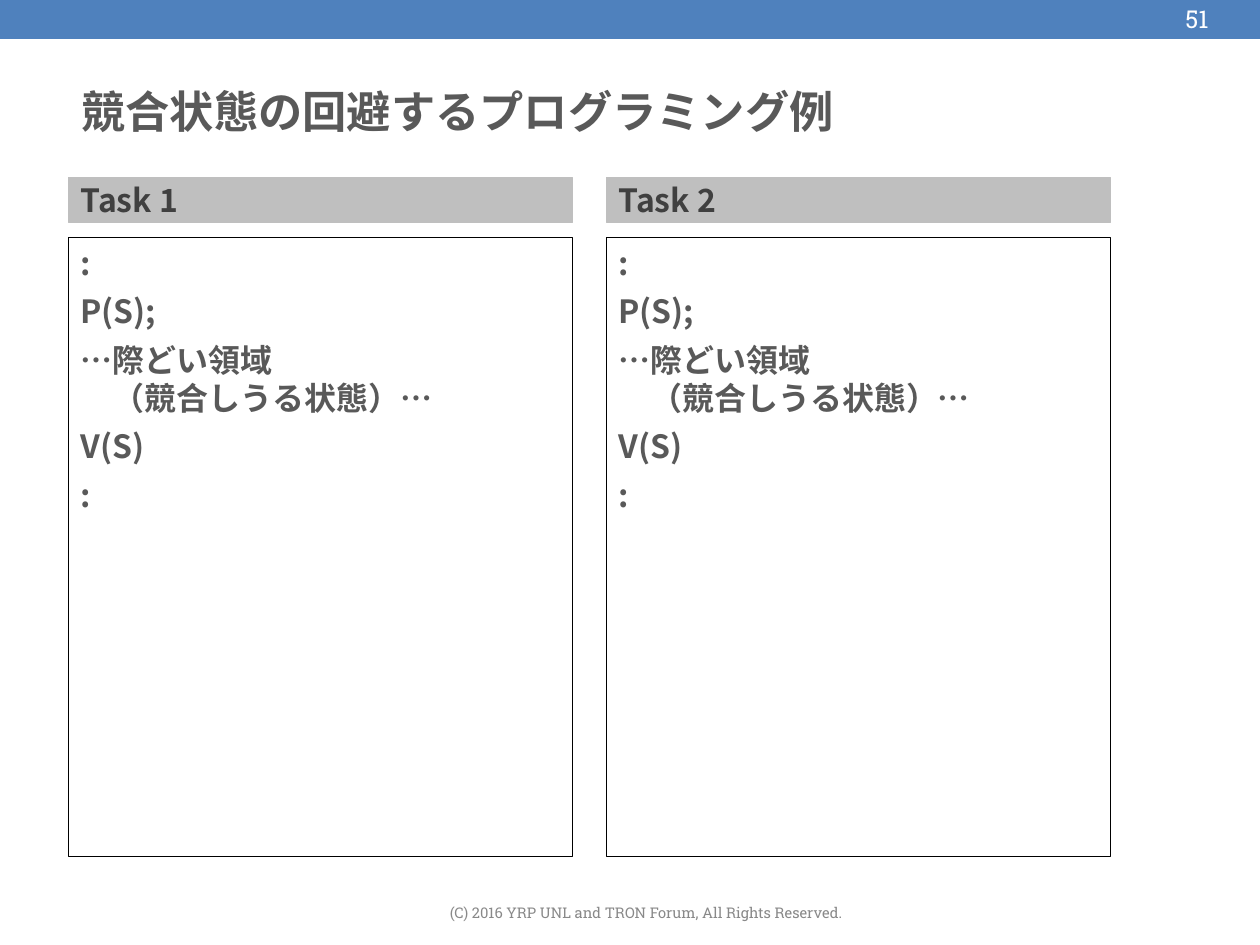
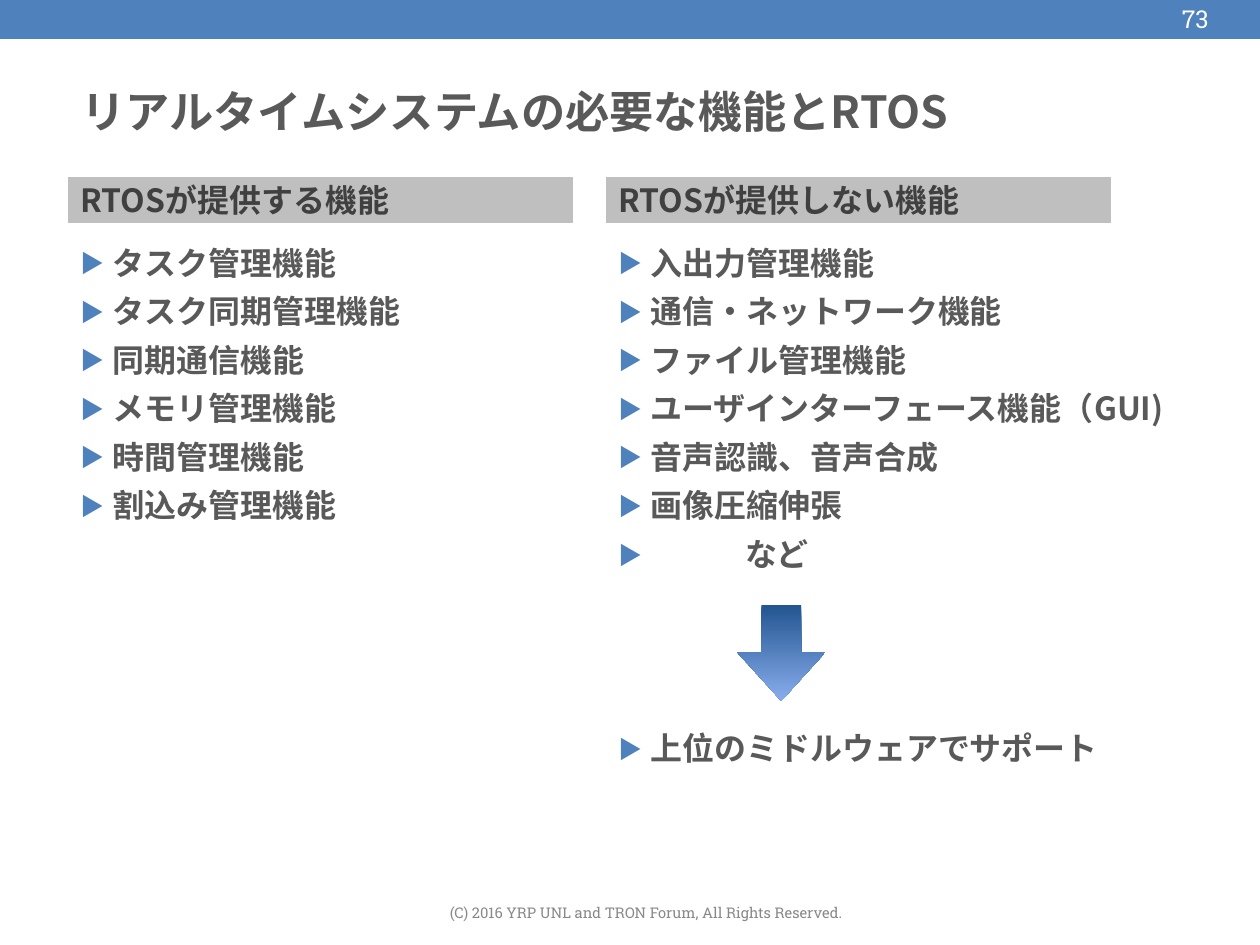
from dataclasses import dataclass

from lxml import etree
from pptx import Presentation, util as u
from pptx.dml.color import RGBColor
from pptx.enum import shapes, text
from pptx.oxml.ns import qn
from pptx.shapes.autoshape import Shape
from pptx.slide import Slide
from pptx.text.text import TextFrame, _Paragraph

Inches, Pt = u.Inches, u.Pt

BLUE = RGBColor(0x4F, 0x81, 0xBD)
WHITE = RGBColor(0xFF, 0xFF, 0xFF)
BLACK = RGBColor(0x00, 0x00, 0x00)
BODY_GRAY = RGBColor(0x59, 0x59, 0x59)
HEAD_GRAY = RGBColor(0x40, 0x40, 0x40)
HEAD_FILL = RGBColor(0xBF, 0xBF, 0xBF)
FOOTER_GRAY = RGBColor(0x89, 0x89, 0x89)
ARROW_DARK = RGBColor(0x23, 0x55, 0x91)
ARROW_LIGHT = RGBColor(0x88, 0xAD, 0xED)

SANS = "Noto Sans CJK JP"
SLAB = "Roboto Slab"
FOOTER = "(C) 2016 YRP UNL and TRON Forum, All Rights Reserved."

SLIDE_W, SLIDE_H = 14.24, 10.68
BAND_H = 0.43
COLUMN_X = (0.77, 6.85)
COLUMN_W = 5.7
HEAD_Y, HEAD_H = 2.01, 0.5
BODY_Y = 2.68
HANG = 0.36
LINE_PT, GAP_PT = 31, 8.5


@dataclass(frozen=True)
class Item:
    text: str
    hang: float = HANG
    before: float = GAP_PT


@dataclass(frozen=True)
class Column:
    heading: str
    items: tuple[Item, ...]
    width: float = COLUMN_W


@dataclass(frozen=True)
class Page:
    number: int
    title: str
    columns: tuple[Column, Column]
    body_h: float
    bulleted: bool


CODE = tuple(map(Item, (":", "P(S);", "…際どい領域\v（競合しうる状態）…", "V(S)", ":")))
PROVIDED = tuple(map(Item, (
    "タスク管理機能", "タスク同期管理機能", "同期通信機能",
    "メモリ管理機能", "時間管理機能", "割込み管理機能")))
NOT_PROVIDED = tuple(map(Item, (
    "入出力管理機能", "通信・ネットワーク機能", "ファイル管理機能",
    "ユーザインターフェース機能（GUI)", "音声認識、音声合成", "画像圧縮伸張"))) + (
    Item("など", hang=1.43),
    # Leaves three lines free for the arrow.
    Item("上位のミドルウェアでサポート", before=4 * GAP_PT + 3 * LINE_PT))

TASKS = Page(51, "競合状態の回避するプログラミング例",
             (Column("Task 1", CODE), Column("Task 2", CODE)),
             body_h=7, bulleted=False)
FUNCTIONS = Page(73, "リアルタイムシステムの必要な機能とRTOS",
                 (Column("RTOSが提供する機能", PROVIDED),
                  Column("RTOSが提供しない機能", NOT_PROVIDED, width=6.88)),
                 body_h=6.87, bulleted=True)


def write(p: _Paragraph, words: str, *, size: float = 26, color: RGBColor = BODY_GRAY,
          font: str = SANS, bold: bool = True,
          align: text.PP_ALIGN = text.PP_ALIGN.LEFT) -> None:
    p.text = words
    p.alignment = align
    for r in p.runs:
        f = r.font
        f.size, f.bold, f.name = Pt(size), bold, font
        f.color.rgb = color
        ea = etree.Element(qn("a:ea"), typeface=font)
        r._r.rPr.find(qn("a:latin")).addnext(ea)


def set_frame(tf: TextFrame, pad_x: float = 0.14, pad_y: float = 0.07,
              anchor: text.MSO_ANCHOR = text.MSO_ANCHOR.MIDDLE) -> None:
    tf.word_wrap = True
    tf.auto_size = text.MSO_AUTO_SIZE.NONE
    tf.vertical_anchor = anchor
    tf.margin_left = tf.margin_right = Inches(pad_x)
    tf.margin_top = tf.margin_bottom = Inches(pad_y)


def add_box(s: Slide, x: float, y: float, w: float, h: float) -> Shape:
    return s.shapes.add_textbox(Inches(x), Inches(y), Inches(w), Inches(h))


def add_preset(s: Slide, kind: shapes.MSO_SHAPE, x: float, y: float,
               w: float, h: float) -> Shape:
    sp = s.shapes.add_shape(kind, Inches(x), Inches(y), Inches(w), Inches(h))
    sp.shadow.inherit = False
    return sp


def paint(sp: Shape, color: RGBColor, line_pt: float) -> None:
    """Give fill and outline the same colour."""
    sp.fill.solid()
    sp.fill.fore_color.rgb = color
    sp.line.color.rgb = color
    sp.line.width = Pt(line_pt)


def set_hang(p: _Paragraph, hang: float, bulleted: bool) -> None:
    pPr = p._p.get_or_add_pPr()
    pPr.set("marL", str(Inches(hang)))
    pPr.set("indent", str(-Inches(hang)))
    if bulleted:
        clr = etree.SubElement(pPr, qn("a:buClr"))
        etree.SubElement(clr, qn("a:srgbClr"), val=str(BLUE))
        etree.SubElement(pPr, qn("a:buSzPct"), val="75000")
        etree.SubElement(pPr, qn("a:buFont"), typeface=SANS)
        etree.SubElement(pPr, qn("a:buChar"), char="▶")


def add_column(s: Slide, x: float, column: Column, page: Page) -> None:
    body = add_box(s, x, BODY_Y, column.width, page.body_h)
    if not page.bulleted:
        body.line.color.rgb = BLACK
        body.line.width = Pt(0.75)
    tf = body.text_frame
    set_frame(tf, anchor=text.MSO_ANCHOR.TOP)
    for i, item in enumerate(column.items):
        p = tf.add_paragraph() if i else tf.paragraphs[0]
        write(p, item.text)
        p.line_spacing = Pt(LINE_PT)
        p.space_before = Pt(item.before if i else 0)
        set_hang(p, item.hang, page.bulleted)

    head = add_preset(s, shapes.MSO_SHAPE.RECTANGLE, x, HEAD_Y, COLUMN_W, HEAD_H)
    paint(head, HEAD_FILL, 0.75)
    set_frame(head.text_frame, pad_y=0)
    write(head.text_frame.paragraphs[0], column.heading, color=HEAD_GRAY)


def add_page(prs: Presentation, page: Page) -> Slide:
    s = prs.slides.add_slide(prs.slide_layouts[5])
    band = add_preset(s, shapes.MSO_SHAPE.RECTANGLE, 0, 0, SLIDE_W, BAND_H)
    paint(band, BLUE, 2)

    title = s.shapes.title
    title.left, title.top = Inches(0.78), Inches(0.75)
    title.width, title.height = Inches(11.77), Inches(1.01)
    set_frame(title.text_frame)
    write(title.text_frame.paragraphs[0], page.title, size=36)

    for x, column in zip(COLUMN_X, page.columns):
        add_column(s, x, column, page)

    number = add_box(s, 12.94, 0, 0.86, BAND_H).text_frame
    set_frame(number)
    write(number.paragraphs[0], str(page.number), size=20, color=WHITE,
          font=SLAB, bold=False, align=text.PP_ALIGN.RIGHT)

    footer = add_box(s, 0.79, 10.12, 13.03, 0.39).text_frame
    set_frame(footer, pad_x=0.1, pad_y=0.05)
    write(footer.paragraphs[0], FOOTER, size=12, color=FOOTER_GRAY,
          font=SLAB, bold=False, align=text.PP_ALIGN.CENTER)
    return s


def add_down_arrow(s: Slide) -> None:
    sp = add_preset(s, shapes.MSO_SHAPE.DOWN_ARROW, 8.33, 6.84, 1, 1.08)
    sp.adjustments[0], sp.adjustments[1] = 0.45, 0.55
    sp.line.fill.background()
    sp.fill.gradient()
    sp.fill.gradient_angle = 270
    for stop, color, at in zip(sp.fill.gradient_stops, (ARROW_DARK, ARROW_LIGHT), (0, 1)):
        stop.color.rgb = color
        stop.position = at


def main() -> None:
    prs = Presentation()
    prs.slide_width, prs.slide_height = Inches(SLIDE_W), Inches(SLIDE_H)
    add_page(prs, TASKS)
    add_down_arrow(add_page(prs, FUNCTIONS))
    prs.save("out.pptx")


if __name__ == "__main__":
    main()
